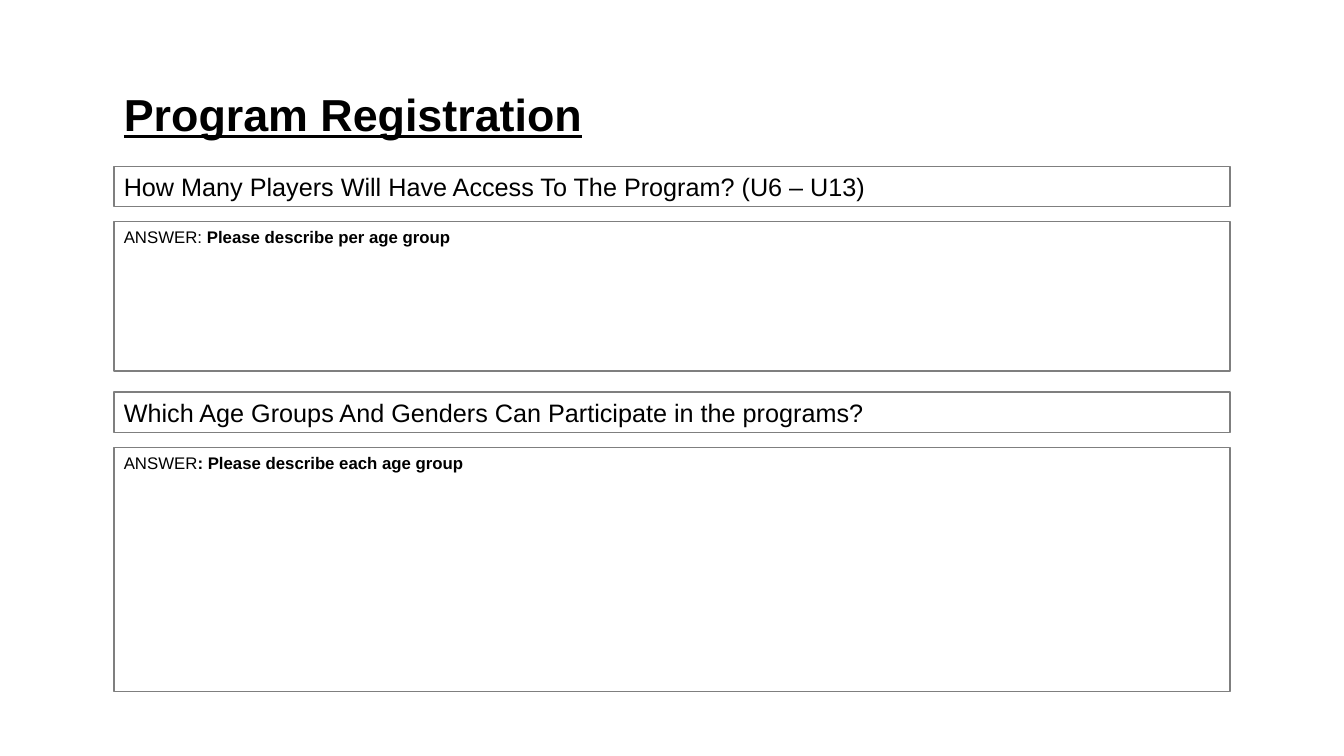
from dataclasses import dataclass

from pptx import Presentation
from pptx.dml.color import RGBColor
from pptx.enum.shapes import MSO_SHAPE
from pptx.enum.text import MSO_ANCHOR, PP_ALIGN
from pptx.util import Inches, Pt


@dataclass(frozen=True)
class Theme:
    font: str = "Arial"
    ink: RGBColor = RGBColor(0, 0, 0)
    paper: RGBColor = RGBColor(255, 255, 255)
    border: RGBColor = RGBColor(0x7F, 0x7F, 0x7F)
    title_size: int = 32
    question_size: int = 18
    answer_size: int = 12


THEME = Theme()
LEFT = 1.13
TITLE_TOP, TITLE_WIDTH, TITLE_HEIGHT = 0.67, 11.81, 0.98
BOX_WIDTH = 11.07
QUESTION_HEIGHT = 0.4
ANSWER_OFFSET = 0.55

# question top, question, answer height, answer label, answer prompt
SECTIONS = [
    (1.65, "How Many Players Will Have Access To The Program? (U6 – U13)",
     1.48, "ANSWER: ", "Please describe per age group"),
    (3.89, "Which Age Groups And Genders Can Participate in the programs?",
     2.42, "ANSWER", ": Please describe each age group"),
]


def add_run(paragraph, text, size, **formats):
    run = paragraph.add_run()
    run.text = text
    run.font.color.rgb = THEME.ink
    values = {"name": THEME.font, "size": Pt(size), **formats}
    for attribute, value in values.items():
        setattr(run.font, attribute, value)


def add_title(slide, text):
    title = slide.shapes.add_textbox(
        Inches(LEFT), Inches(TITLE_TOP), Inches(TITLE_WIDTH), Inches(TITLE_HEIGHT))
    frame = title.text_frame
    frame.word_wrap = True
    frame.vertical_anchor = MSO_ANCHOR.MIDDLE
    paragraph = frame.paragraphs[0]
    paragraph.line_spacing = 0.9
    add_run(paragraph, text, THEME.title_size, bold=True, underline=True)


def add_box(slide, top, height):
    """Add a bordered box and return its empty first paragraph."""
    box = slide.shapes.add_shape(
        MSO_SHAPE.RECTANGLE,
        Inches(LEFT), Inches(top), Inches(BOX_WIDTH), Inches(height))
    box.shadow.inherit = False
    box.fill.solid()
    box.fill.fore_color.rgb = THEME.paper
    box.line.color.rgb = THEME.border
    box.line.width = Pt(1)
    frame = box.text_frame
    frame.word_wrap = True
    frame.vertical_anchor = MSO_ANCHOR.TOP
    paragraph = frame.paragraphs[0]
    paragraph.alignment = PP_ALIGN.LEFT
    return paragraph


def add_section(slide, top, question, answer_height, label, prompt):
    add_run(add_box(slide, top, QUESTION_HEIGHT), question, THEME.question_size)
    answer = add_box(slide, top + ANSWER_OFFSET, answer_height)
    add_run(answer, label, THEME.answer_size)
    add_run(answer, prompt, THEME.answer_size, bold=True)


def main():
    deck = Presentation()
    deck.slide_width, deck.slide_height = Inches(13.33), Inches(7.5)
    slide = deck.slides.add_slide(deck.slide_layouts[6])
    add_title(slide, "Program Registration")
    for section in SECTIONS:
        add_section(slide, *section)
    deck.save("out.pptx")


if __name__ == "__main__":
    main()
